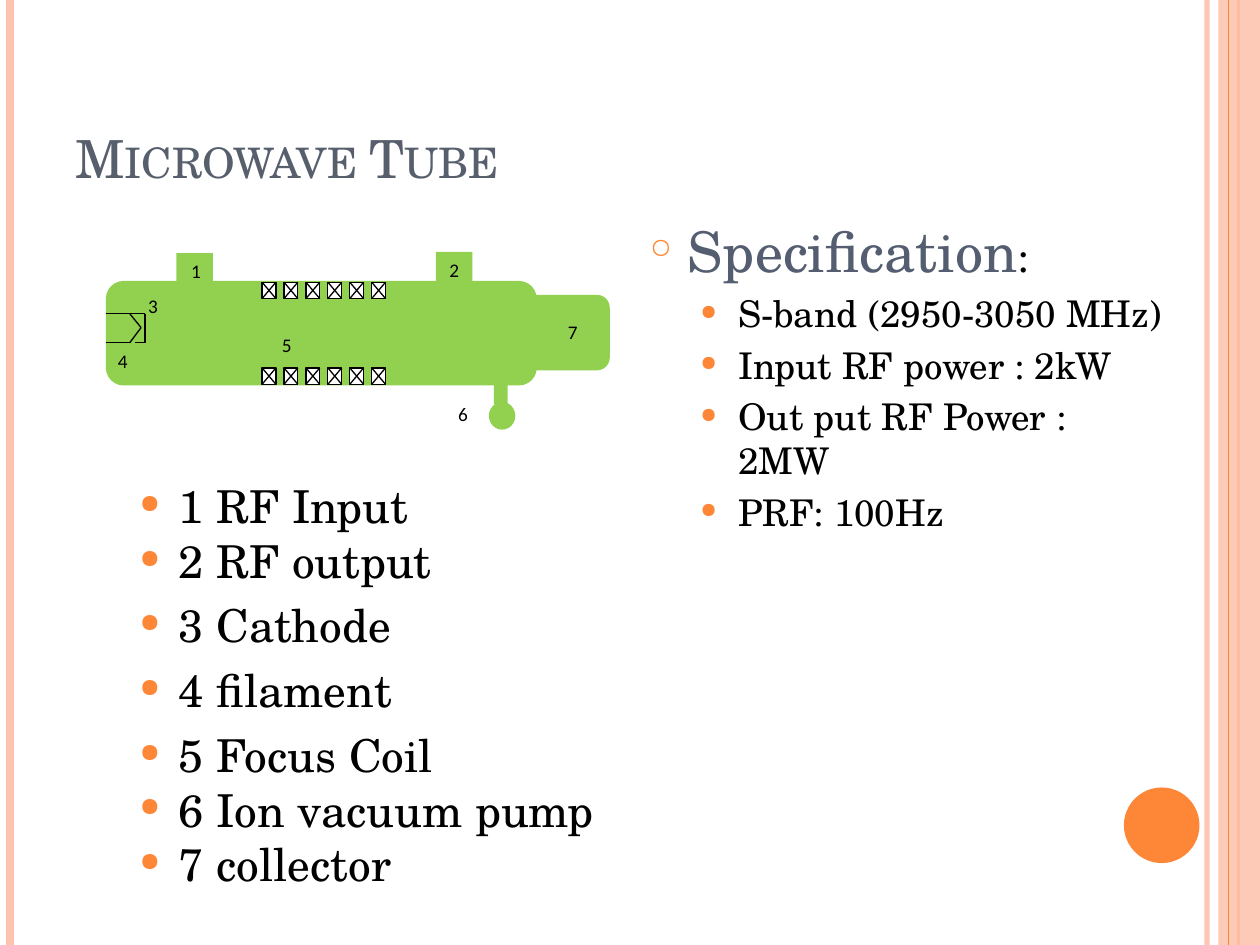
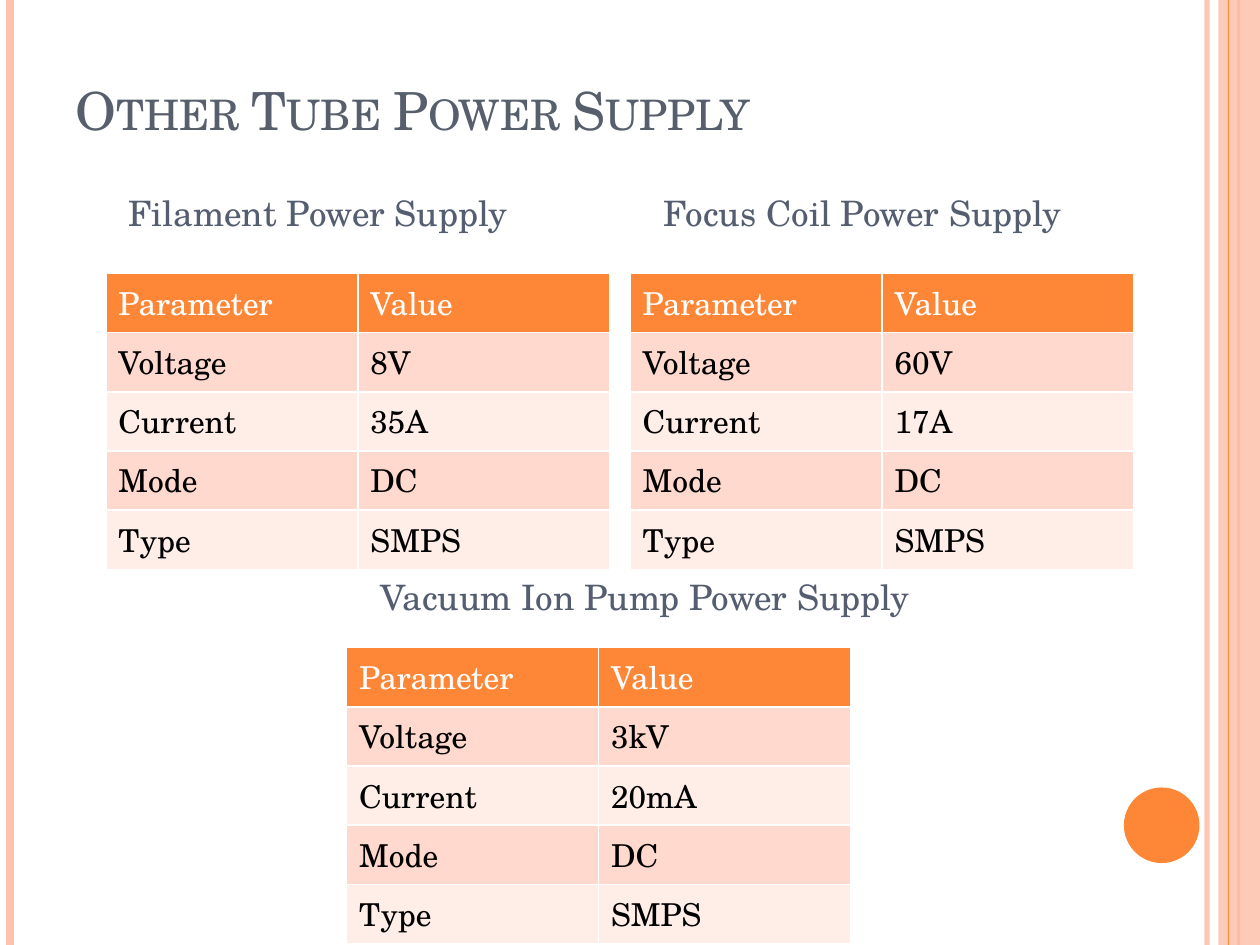
from pptx import Presentation
from pptx.util import Inches, Pt
from pptx.dml.color import RGBColor
from pptx.enum.shapes import MSO_SHAPE, MSO_CONNECTOR
from pptx.enum.text import PP_ALIGN, MSO_ANCHOR
from pptx.oxml.ns import qn
from lxml.etree import SubElement

# Shared look
SERIF, SANS = "TeX Gyre Schola", "Calibri"
ORANGE, PINK, GREEN = "FE8637", "FEC3AE", "92D050"
SLATE, STEEL, BLACK, WHITE = "575F6D", "545E70", "000000", "FFFFFF"
BANDS = ["FFD9CE", "FFEDE8"]
RULES = [(9.58, PINK, 3, 93), (0.08, PINK, 4.5, 100), (9.83, ORANGE, 1.5, 100)]
EDGE = (9.75, ORANGE, 0.75, 100)
ROW = 0.47

# Content: tube slide
SPECS = ["S-band (2950-3050 MHz)", "Input RF power : 2kW",
         "Out put RF Power : 2MW", "PRF: 100Hz"]
PARTS = [("1 RF Input", 1), ("2 RF output", 0.8), ("3 Cathode", 1),
         ("4 filament", 1), ("5 Focus Coil", 1),
         ("6 Ion vacuum pump", 0.8), ("7 collector", 0.8)]
BODY = [("round", (0.84, 2.23, 3.42, 0.83)), ("rect", (1.4, 2.01, 0.29, 0.23)),
        ("rect", (3.46, 2, 0.29, 0.23)), ("round", (3.97, 2.34, 0.87, 0.6)),
        ("oval", (3.88, 3.19, 0.21, 0.22)), ("rect", (3.92, 3.04, 0.11, 0.17))]
COILS = {"left": 2.08, "right": 2.95, "count": 6, "tops": (2.24, 2.92),
         "wide": 0.11, "high": 0.13}
CATHODE = [(0.84, 2.49), (1.15, 2.49), (1.15, 2.72), (1.07, 2.72)]
HEATER = [(1.03, 2.49), (1.12, 2.6), (1.03, 2.72), (0.84, 2.72)]
MARKS = {"1": (1.41, 2.01), "2": (3.46, 2), "3": (1.07, 2.29), "4": (0.83, 2.72),
         "5": (2.13, 2.6), "6": (3.53, 3.14), "7": (4.4, 2.49)}

# Content: supply slide (heading, heading box, table corner, voltage, current)
SUPPLIES = [
    ("Filament Power Supply", (0.92, 1.42, 3.5, 0.53), (0.84, 2.17), "8V", "35A"),
    ("Focus Coil Power Supply", (5.17, 1.42, 3.5, 0.53), (5, 2.17), "60V", "17A"),
    ("Vacuum Ion Pump Power Supply", (2.92, 4.47, 4.83, 0.53), (2.75, 5.14),
     "3kV", "20mA"),
]
KINDS = {"rect": MSO_SHAPE.RECTANGLE, "round": MSO_SHAPE.ROUNDED_RECTANGLE,
         "oval": MSO_SHAPE.OVAL}


def rgb(code):
    return RGBColor.from_string(code)


def apply(item, **style):
    for name, value in style.items():
        setattr(item, name, value)


def fade(fill, alpha):
    if alpha < 100:
        SubElement(fill.find(qn("a:srgbClr")), qn("a:alpha"), val=str(alpha * 1000))


def shape(home, kind, box, color, edge=None, alpha=100):
    item = home.add_shape(KINDS[kind], *map(Inches, box))
    item.shadow.inherit = False
    item.fill.solid()
    item.fill.fore_color.rgb = rgb(color)
    fade(item._element.spPr.find(qn("a:solidFill")), alpha)
    if edge:
        item.line.color.rgb = rgb(edge)
        item.line.width = Pt(0.75)
    else:
        item.line.fill.background()
    return item


def line(home, start, end, color=BLACK, width=0.75, alpha=100):
    item = home.add_connector(MSO_CONNECTOR.STRAIGHT, *map(Inches, start + end))
    item.line.color.rgb = rgb(color)
    item.line.width = Pt(width)
    props = item._element.spPr
    fade(props.find(qn("a:ln")).find(qn("a:solidFill")), alpha)
    SubElement(props, qn("a:effectLst"))


def trace(home, points):
    for start, end in zip(points, points[1:]):
        line(home, start, end)


def frame(home, box, anchor=MSO_ANCHOR.TOP):
    text = home.add_textbox(*map(Inches, box)).text_frame
    apply(text, word_wrap=True, vertical_anchor=anchor)
    return text


def write(para, text, size, color, face=SERIF):
    run = para.add_run()
    run.text = text
    apply(run.font, size=Pt(size), name=face)
    run.font.color.rgb = rgb(color)
    return run


def bullet(para, sign, scale, left, hang):
    props = para._p.get_or_add_pPr()
    props.set("marL", str(Inches(left)))
    props.set("indent", str(-Inches(hang)))
    SubElement(SubElement(props, qn("a:buClr")), qn("a:srgbClr"), val=ORANGE)
    SubElement(props, qn("a:buSzPct"), val=str(scale * 1000))
    SubElement(props, qn("a:buChar"), char=sign)


def page(deck, title, box):
    """Blank slide with the side bands, the dot and a title."""
    home = deck.slides.add_slide(deck.slide_layouts[6]).shapes

    def rule(x, *style):
        line(home, (x, 0), (x, 7.5), *style)

    for spec in RULES:
        rule(*spec)
    shape(home, "rect", (9.67, 0, 0.33, 7.5), PINK, alpha=87)
    rule(*EDGE)
    shape(home, "oval", (8.92, 6.25, 0.6, 0.6), ORANGE)
    para = frame(home, box, MSO_ANCHOR.BOTTOM).paragraphs[0]
    run = write(para, title, 30, SLATE)
    run.font._element.set("cap", "small")
    return home


def tube(home):
    """Labelled drawing of the tube, as one group."""
    home = home.add_group_shape().shapes
    for kind, box in BODY:
        part = shape(home, kind, box, GREEN)
        if kind == "round":
            part.adjustments[0] = 0.17
    # Focus coils: crossed boxes in two rows
    step = (COILS["right"] - COILS["left"]) / (COILS["count"] - 1)
    wide, high = COILS["wide"], COILS["high"]
    for y in COILS["tops"]:
        for i in range(COILS["count"]):
            x = COILS["left"] + i * step
            shape(home, "rect", (x, y, wide, high), WHITE, BLACK)
            line(home, (x, y), (x + wide, y + high))
            line(home, (x + wide, y), (x, y + high))
    trace(home, CATHODE)
    trace(home, HEATER)
    for mark, spot in MARKS.items():
        para = frame(home, spot + (0.29, 0.27)).paragraphs[0]
        apply(para, alignment=PP_ALIGN.CENTER, space_after=Pt(10))
        write(para, mark, 11, BLACK, SANS)


def border(cell):
    props = cell._tc.get_or_add_tcPr()
    for side in "LRTB":
        edge = SubElement(props, qn("a:ln" + side), w=str(Pt(1)))
        SubElement(SubElement(edge, qn("a:solidFill")), qn("a:srgbClr"), val=WHITE)


def table(home, spot, rows):
    box = spot + (4, ROW * len(rows))
    grid = home.add_table(len(rows), 2, *map(Inches, box)).table
    for r, row in enumerate(rows):
        grid.rows[r].height = Inches(ROW)
        for c, text in enumerate(row):
            cell = grid.cell(r, c)
            border(cell)
            cell.fill.solid()
            cell.fill.fore_color.rgb = rgb(BANDS[(r - 1) % 2] if r else ORANGE)
            write(cell.text_frame.paragraphs[0], text, 18, BLACK if r else WHITE)


def main():
    deck = Presentation()
    apply(deck, slide_width=Inches(10), slide_height=Inches(7.5))

    # Tube slide
    home = page(deck, "Microwave Tube", (0.5, 0.3, 8.17, 1.25))
    text = frame(home, (5.06, 1.67, 4.27, 3.83))
    para = text.paragraphs[0]
    para.space_before = Pt(6)
    bullet(para, "○", 50, 0.3, 0.3)
    write(para, "Specification", 32, STEEL)
    write(para, ":", 24, BLACK)
    for spec in SPECS:
        para = text.add_paragraph()
        apply(para, level=1, space_before=Pt(4.2))
        bullet(para, "●", 57, 0.7, 0.3)
        write(para, spec, 21, BLACK)

    text = frame(home, (0.92, 3.75, 4, 3.17))
    for i, (part, space) in enumerate(PARTS):
        para = text.add_paragraph() if i else text.paragraphs[0]
        apply(para, line_spacing=float(space), space_before=Pt(6))
        bullet(para, "●", 57, 0.4, 0.31)
        write(para, part, 25.9, BLACK)
    tube(home)

    # Supply slide
    home = page(deck, "Other Tube Power Supply", (0.5, 0.5, 8.17, 0.67))
    for name, box, spot, volts, amps in SUPPLIES:
        para = frame(home, box, MSO_ANCHOR.MIDDLE).paragraphs[0]
        write(para, name, 20, STEEL)
        table(home, spot, [("Parameter", "Value"), ("Voltage", volts),
                           ("Current", amps), ("Mode", "DC"), ("Type", "SMPS")])

    deck.save("out.pptx")


if __name__ == "__main__":
    main()
